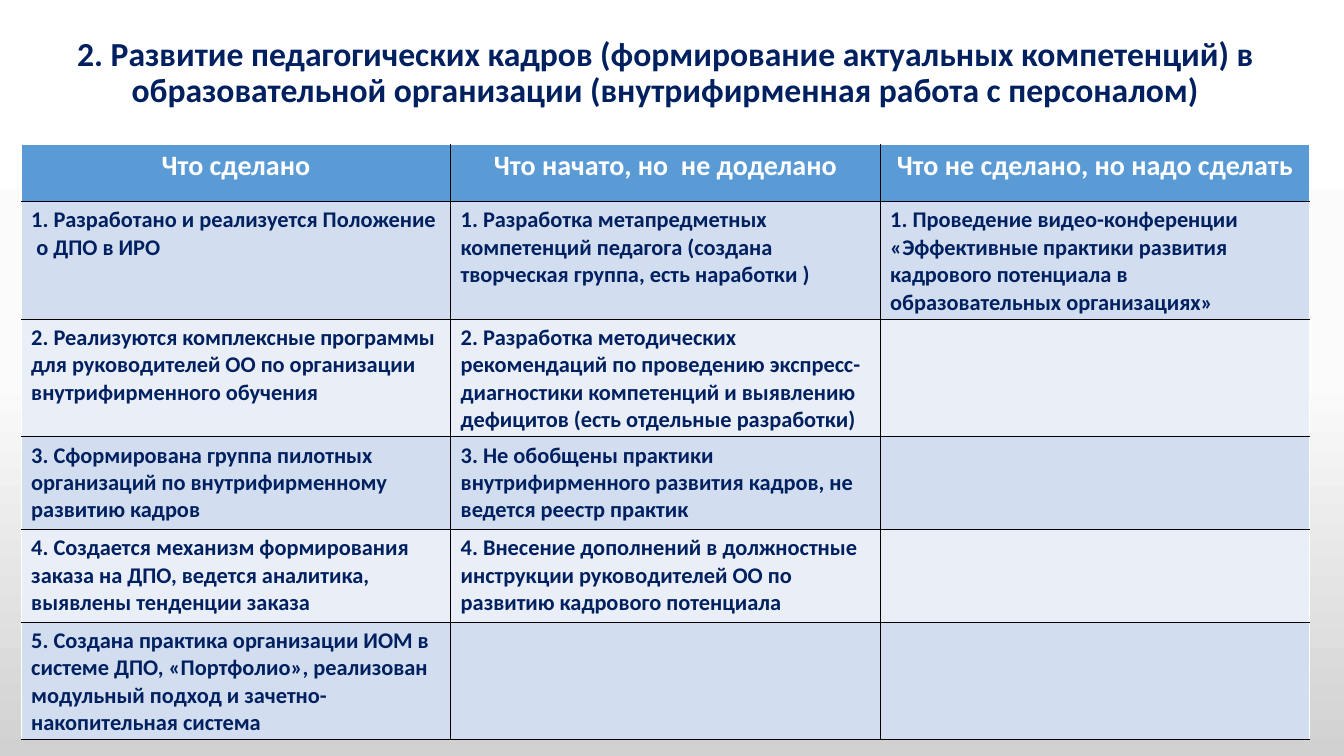
import copy

import pptx
import pptx.dml.color
import pptx.enum.text
import pptx.oxml
import pptx.oxml.ns
import pptx.util

Inches = pptx.util.Inches
Pt = pptx.util.Pt
RGBColor = pptx.dml.color.RGBColor
PP_ALIGN = pptx.enum.text.PP_ALIGN

NAVY = RGBColor(0x00, 0x20, 0x60)
WHITE = RGBColor(0xFF, 0xFF, 0xFF)
BLACK = RGBColor(0x00, 0x00, 0x00)
HEADER_BLUE = RGBColor(0x5B, 0x9B, 0xD5)
BAND_DARK = RGBColor(0xD2, 0xDE, 0xEF)
BAND_LIGHT = RGBColor(0xEA, 0xEF, 0xF7)
BACKDROP = [(0, WHITE), (0.5, RGBColor(0xFB, 0xFB, 0xFB)),
            (1, RGBColor(0xD1, 0xD1, 0xD1))]

TITLE_FONT = {"name": "Calibri", "size": Pt(24), "bold": True}
HEADER_FONT = {"name": "Calibri", "size": Pt(20), "bold": True}
BODY_FONT = {"name": "Calibri", "size": Pt(16), "bold": True}

TITLE = ("2. Развитие педагогических кадров (формирование актуальных компетенций) "
         "в образовательной организации (внутрифирменная работа с персоналом)")
PROGRESS = {
    "Что сделано": [
        "1. Разработано и реализуется Положение  о ДПО в ИРО",
        "2. Реализуются комплексные программы для руководителей ОО "
        "по организации внутрифирменного обучения",
        "3. Сформирована группа пилотных организаций "
        "по внутрифирменному развитию кадров",
        "4. Создается механизм формирования заказа на ДПО, "
        "ведется аналитика, выявлены тенденции заказа",
        "5. Создана практика организации ИОМ в системе ДПО, «Портфолио», "
        "реализован модульный подход и зачетно-накопительная система",
    ],
    "Что начато, но  не доделано": [
        "1. Разработка метапредметных компетенций педагога "
        "(создана творческая группа, есть наработки )",
        "2. Разработка методических рекомендаций по проведению "
        "экспресс-диагностики компетенций и выявлению дефицитов "
        "(есть отдельные разработки)",
        "3. Не обобщены практики внутрифирменного развития кадров, "
        "не ведется реестр практик",
        "4. Внесение дополнений в должностные инструкции "
        "руководителей ОО по развитию кадрового потенциала",
    ],
    "Что не сделано, но надо сделать": [
        "1. Проведение видео-конференции «Эффективные практики развития "
        "кадрового потенциала в образовательных организациях»",
    ],
}


def write(paragraph, text, font_values, color):
    run = paragraph.add_run()
    run.text = text
    for name, value in font_values.items():
        setattr(run.font, name, value)
    run.font.color.rgb = color


def paint_background(slide):
    fill = slide.background.fill
    fill.gradient()
    fill.gradient_angle = 270
    stops = slide.element.find(".//" + pptx.oxml.ns.qn("a:gsLst"))
    stops.append(copy.deepcopy(stops[-1]))
    for stop, (position, color) in zip(fill.gradient_stops, BACKDROP):
        stop.position = position
        stop.color.rgb = color


def add_title(slide, left, top, width, height):
    frame = slide.shapes.add_textbox(left, top, width, height).text_frame
    frame.word_wrap = True
    frame.vertical_anchor = pptx.enum.text.MSO_ANCHOR.MIDDLE
    heading = frame.paragraphs[0]
    heading.alignment = PP_ALIGN.CENTER
    heading.line_spacing = 0.9
    write(heading, TITLE, TITLE_FONT, NAVY)


def set_borders(cell, colors):
    """Draw 1 pt edges; colors maps L, R, T, B, in that order, to a colour."""
    properties = cell._tc.get_or_add_tcPr()
    for side, color in colors.items():
        properties.append(pptx.oxml.parse_xml(
            f'<a:ln{side} {pptx.oxml.ns.nsdecls("a")} w="{Pt(1)}"><a:solidFill>'
            f'<a:srgbClr val="{color}"/></a:solidFill></a:ln{side}>'))


def add_progress_table(slide, left, top, width, header_height, row_height):
    column_count = len(PROGRESS)
    row_count = 1 + max(len(items) for items in PROGRESS.values())
    height = header_height + row_height * (row_count - 1)
    table = slide.shapes.add_table(
        row_count, column_count, left, top, width, height).table
    table.rows[0].height = header_height
    for row in list(table.rows)[1:]:
        row.height = row_height

    for c, (header, items) in enumerate(PROGRESS.items()):
        table.columns[c].width = width // column_count
        for r in range(row_count):
            cell = table.cell(r, c)
            set_borders(cell, {
                "L": WHITE if c == 0 else BLACK,
                "R": WHITE if c == column_count - 1 else BLACK,
                "T": WHITE if r == 0 else BLACK,
                "B": BLACK,
            })
            cell.fill.solid()
            paragraph = cell.text_frame.paragraphs[0]
            if r == 0:
                cell.fill.fore_color.rgb = HEADER_BLUE
                paragraph.alignment = PP_ALIGN.CENTER
                write(paragraph, header, HEADER_FONT, WHITE)
            else:
                cell.fill.fore_color.rgb = BAND_DARK if r % 2 else BAND_LIGHT
                if r <= len(items):
                    write(paragraph, items[r - 1], BODY_FONT, NAVY)


def main():
    deck = pptx.Presentation()
    deck.slide_width, deck.slide_height = Inches(13.33), Inches(7.5)
    slide = deck.slides.add_slide(deck.slide_layouts[6])
    paint_background(slide)
    add_title(slide, Inches(0.23), Inches(0.16), Inches(12.74), Inches(1.14))
    add_progress_table(slide, Inches(0.21), Inches(1.43), Inches(12.78),
                       Inches(0.57), Inches(0.92))
    deck.save("out.pptx")


if __name__ == "__main__":
    main()
